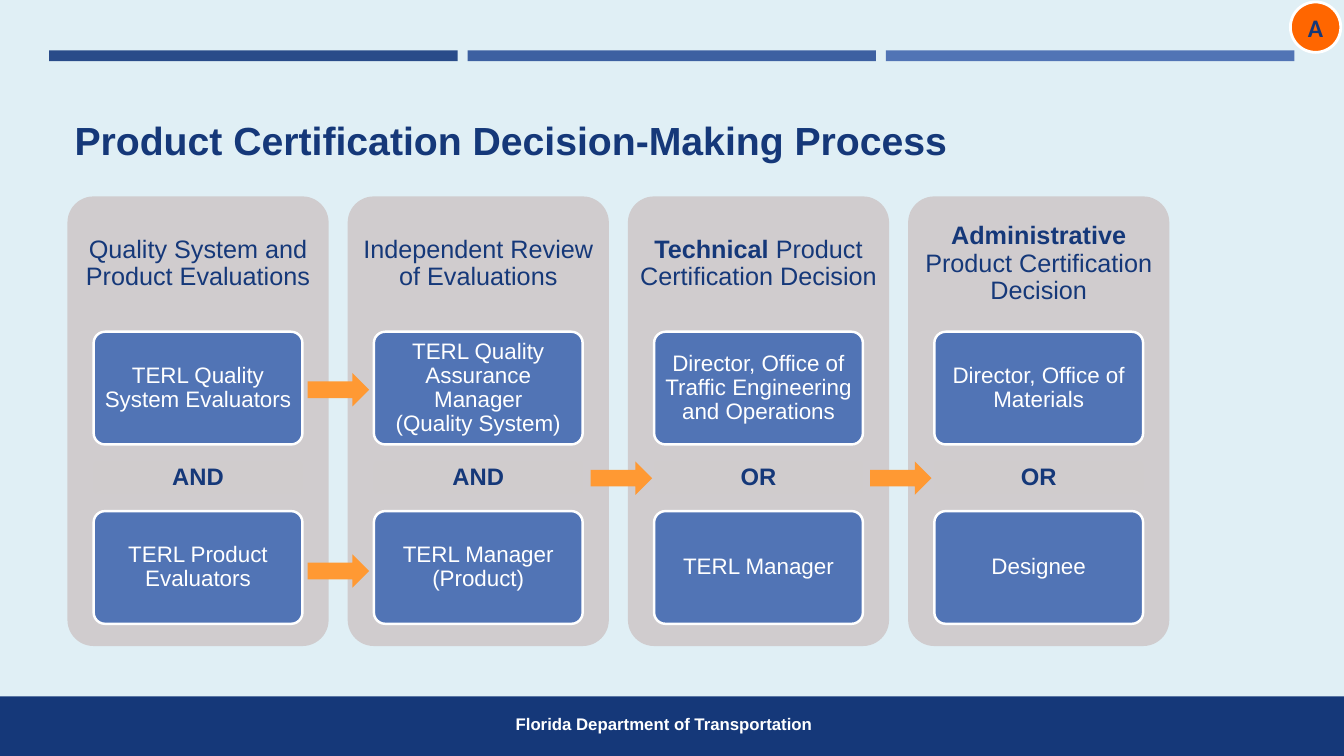
"""Builds the product certification decision-making slide."""
from pptx import Presentation
from pptx.dml.color import RGBColor
from pptx.enum.shapes import MSO_SHAPE
from pptx.enum.text import MSO_ANCHOR, PP_ALIGN
from pptx.util import Cm, Pt

RECT, ROUND = MSO_SHAPE.RECTANGLE, MSO_SHAPE.ROUNDED_RECTANGLE
ARROW, OVAL = MSO_SHAPE.RIGHT_ARROW, MSO_SHAPE.OVAL
MIDDLE, TOP = MSO_ANCHOR.MIDDLE, MSO_ANCHOR.TOP
CENTER, LEFT = PP_ALIGN.CENTER, PP_ALIGN.LEFT
HEX = {
    "sky": "E0EFF5", "navy": "153879", "blue": "5174B5", "white": "FFFFFF",
    "bar1": "294B89", "bar2": "3D60A1", "panel": "D0CCCE", "plate": "D0CCCD",
    "arrow": "FF9933", "badge": "FF6600",
}


def color(name):
    return RGBColor.from_string(HEX[name])


def add_box(left, top, width, height, text="", lead="", kind=None, fill=None,
            line=0, size=16, ink="navy", bold=False, face="Arial",
            align=CENTER, anchor=MIDDLE, pad=(0.25, 0.13), gap=0.9):
    area = Cm(left), Cm(top), Cm(width), Cm(height)
    if kind is None:
        box = slide.shapes.add_textbox(*area)
    else:
        box = slide.shapes.add_shape(kind, *area)
        box.shadow.inherit = False
        box.fill.solid()
        box.fill.fore_color.rgb = color(fill)
        if line:
            box.line.color.rgb = color("white")
            box.line.width = Pt(line)
        else:
            box.line.fill.background()
        if kind == ROUND:
            box.adjustments[0] = 0.1
    if not text:
        return
    frame = box.text_frame
    frame.word_wrap = True
    frame.vertical_anchor = anchor
    frame.margin_left = frame.margin_right = Cm(pad[0])
    frame.margin_top = frame.margin_bottom = Cm(pad[1])
    para = frame.paragraphs[0]
    para.alignment = align
    para.line_spacing = gap
    rows = [(row, bold) for row in text.split("\n")]
    if lead:
        rows.insert(0, (lead, True))
    for i, (row, heavy) in enumerate(rows):
        if i and not lead:
            para.add_line_break()
        run = para.add_run()
        run.text = row
        run.font.name = face
        run.font.size = Pt(size)
        run.font.bold = heavy
        run.font.color.rgb = color(ink)


deck = Presentation()
deck.slide_width, deck.slide_height = Cm(33.86), Cm(19.05)
slide = deck.slides.add_slide(deck.slide_layouts[6])
slide.background.fill.solid()
slide.background.fill.fore_color.rgb = color("sky")

for i, fill in enumerate(("bar1", "bar2", "blue")):
    add_box(1.24 + 10.54 * i, 1.27, 10.29, 0.27, kind=RECT, fill=fill)
add_box(0, 17.55, 33.86, 1.5, kind=RECT, fill="navy")
add_box(0.84, 17.86, 31.78, 0.77, "Florida Department of Transportation",
        size=12, ink="white", bold=True, anchor=TOP, gap=1)
add_box(1.63, 2.74, 30.63, 1.7, "Product Certification Decision-Making Process",
        size=28, bold=True, align=LEFT)

STAGES = [
    ("", "Quality System and Product Evaluations",
     "TERL Quality System Evaluators", "AND", "TERL Product Evaluators"),
    ("", "Independent Review of Evaluations",
     "TERL Quality Assurance Manager\n(Quality System)", "AND",
     "TERL Manager\n(Product)"),
    ("Technical", " Product Certification Decision",
     "Director, Office of Traffic Engineering and Operations", "OR",
     "TERL Manager"),
    ("Administrative", " Product Certification Decision",
     "Director, Office of Materials", "OR", "Designee"),
]
for i, (lead, head, first, link, second) in enumerate(STAGES):
    left = 1.7 + 7.06 * i
    add_box(left, 4.95, 6.58, 11.33, kind=ROUND, fill="panel")
    add_box(left, 4.95, 6.58, 3.4, head, lead=lead, size=18, pad=(0.18, 0.18))
    for top, text in ((8.36, first), (12.88, second)):
        add_box(left + 0.66, top, 5.26, 2.84, text, kind=ROUND, fill="blue",
                line=1.75, ink="white", pad=(0.1, 0.08))
    add_box(left + 0.66, 11.63, 5.26, 0.81, link, kind=ROUND, fill="plate",
            size=17, bold=True, pad=(0.13, 0.1))

for left, top in ((7.75, 9.4), (7.75, 13.97), (14.88, 11.63), (21.92, 11.63)):
    add_box(left, top, 1.55, 0.84, kind=ARROW, fill="arrow")
add_box(32.51, 0.05, 1.27, 1.27, "A", kind=OVAL, fill="badge", line=2,
        size=18, bold=True, face="Calibri", gap=1)

deck.save("out.pptx")
